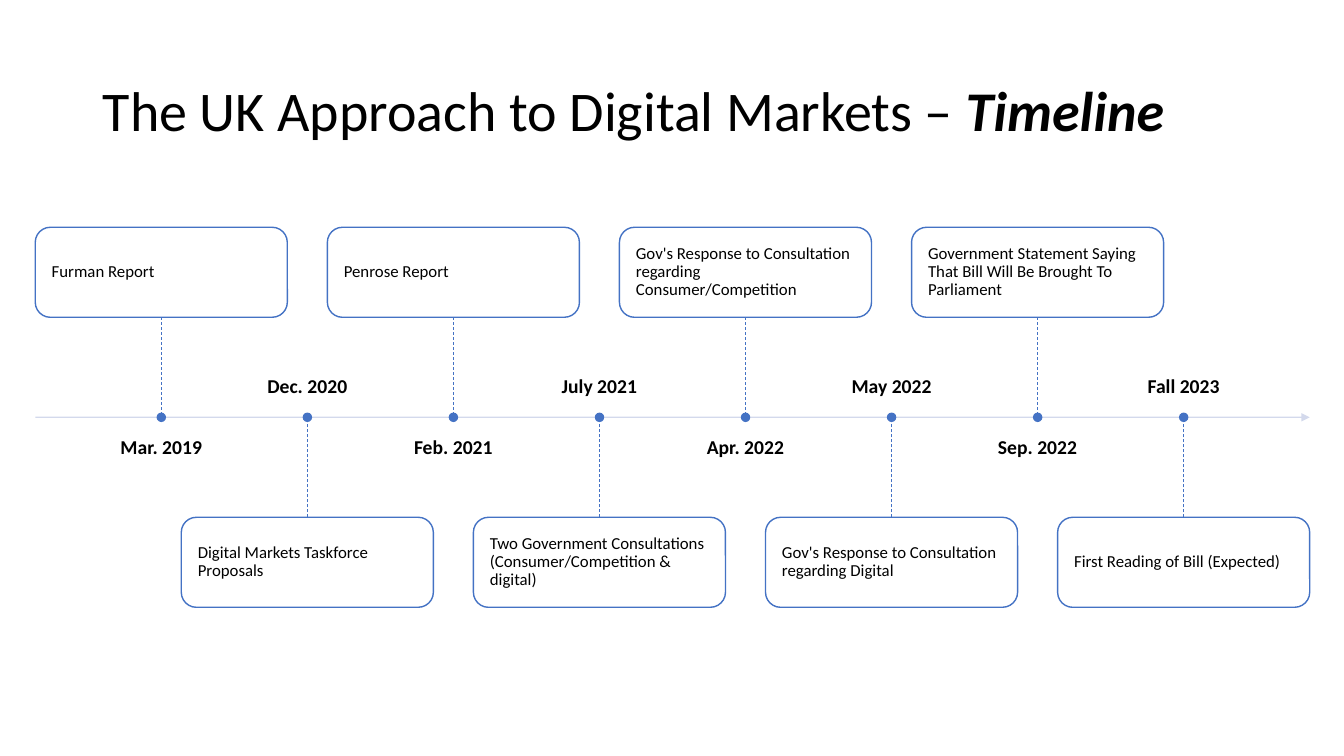
from dataclasses import dataclass

import lxml.etree
import pptx
import pptx.dml.color
import pptx.dml.fill
import pptx.enum.dml
import pptx.enum.shapes
import pptx.enum.text
import pptx.oxml.ns
import pptx.shapes.connector
import pptx.slide
import pptx.text.text
import pptx.util

RGBColor = pptx.dml.color.RGBColor
BLACK = RGBColor(0x00, 0x00, 0x00)
WHITE = RGBColor(0xFF, 0xFF, 0xFF)
BLUE = RGBColor(0x44, 0x72, 0xC4)
PALE_BLUE = RGBColor(0xCF, 0xD5, 0xEA)

FONT = "Calibri"
OPACITY = "90000"

# Grid in inches: one column per milestone, rows counted from the axis
SLIDE_WIDTH, SLIDE_HEIGHT = 13.33, 7.5
AXIS_LEFT, AXIS_RIGHT, AXIS_Y = 0.35, 12.99, 4.14
FIRST_X, LAST_X = 1.6, 11.74
TOP_EDGE, BOTTOM_EDGE = 2.25, 6.02
ROW = (BOTTOM_EDGE - TOP_EDGE) / 38
BOX_WIDTH, LABEL_WIDTH, DOT_SIZE, BOX_INSET = 2.5, 2.2, 0.08, 0.12
BOX_ROWS, STEM_ROWS, LABEL_ROWS, LABEL_GAP_ROWS = 9, 10, 6, 2

ANCHOR = pptx.enum.text.MSO_ANCHOR
ALIGN = pptx.enum.text.PP_ALIGN
SHAPE = pptx.enum.shapes.MSO_SHAPE
Inches = pptx.util.Inches


@dataclass(frozen=True)
class Milestone:
    date: str
    event: str


MILESTONES = [
    Milestone("Mar. 2019", "Furman Report"),
    Milestone("Dec. 2020", "Digital Markets Taskforce Proposals"),
    Milestone("Feb. 2021", "Penrose Report"),
    Milestone("July 2021", "Two Government Consultations (Consumer/Competition & digital)"),
    Milestone("Apr. 2022", "Gov's Response to Consultation regarding Consumer/Competition"),
    Milestone("May 2022", "Gov's Response to Consultation regarding Digital"),
    Milestone("Sep. 2022", "Government Statement Saying That Bill Will Be Brought To Parliament"),
    Milestone("Fall 2023", "First Reading of Bill (Expected)"),
]
COLUMN = (LAST_X - FIRST_X) / (len(MILESTONES) - 1)

TITLE_FORMAT = {"name": FONT, "size": pptx.util.Pt(40)}
DATE_FORMAT = {"name": FONT, "size": pptx.util.Pt(14), "bold": True}
EVENT_FORMAT = {"name": FONT, "size": pptx.util.Pt(12)}


def add_run(paragraph: pptx.text.text._Paragraph, text: str, font_format: dict) -> None:
    run = paragraph.add_run()
    run.text = text
    run.font.color.rgb = BLACK
    for attribute, value in font_format.items():
        setattr(run.font, attribute, value)


def write(frame: pptx.text.text.TextFrame, text: str, font_format: dict,
          anchor: ANCHOR, alignment: ALIGN, inset: float) -> None:
    frame.word_wrap = True
    frame.vertical_anchor = anchor
    for side in ("left", "top", "right", "bottom"):
        setattr(frame, f"margin_{side}", Inches(inset))
    paragraph = frame.paragraphs[0]
    paragraph.alignment = alignment
    paragraph.line_spacing = 0.9
    add_run(paragraph, text, font_format)


def make_translucent(element: lxml.etree._Element) -> None:
    """Add an alpha value to the first colour inside the element."""
    colour = next(element.iter(pptx.oxml.ns.qn("a:srgbClr")))
    lxml.etree.SubElement(colour, pptx.oxml.ns.qn("a:alpha"), val=OPACITY)


def add_line(slide: pptx.slide.Slide, start: tuple[float, float], end: tuple[float, float],
             colour: RGBColor, width: float) -> pptx.shapes.connector.Connector:
    line = slide.shapes.add_connector(pptx.enum.shapes.MSO_CONNECTOR.STRAIGHT,
                                      *map(Inches, start + end))
    line.line.color.rgb = colour
    line.line.width = pptx.util.Pt(width)
    lxml.etree.SubElement(line._element.spPr, pptx.oxml.ns.qn("a:effectLst"))
    return line


def add_shape(slide: pptx.slide.Slide, kind: SHAPE, left: float, top: float,
              width: float, height: float, fill: RGBColor):
    shape = slide.shapes.add_shape(kind, *map(Inches, (left, top, width, height)))
    shape.shadow.inherit = False
    shape.fill.solid()
    shape.fill.fore_color.rgb = fill
    shape.line.color.rgb = BLUE
    shape.line.width = pptx.util.Pt(1)
    return shape


def add_title(slide: pptx.slide.Slide) -> None:
    title = slide.shapes.title
    title.left, title.top = Inches(0.92), Inches(0.4)
    title.width, title.height = Inches(11.5), Inches(1.45)
    write(title.text_frame, "The UK Approach to Digital Markets – ", TITLE_FORMAT,
          ANCHOR.MIDDLE, ALIGN.LEFT, 0.1)
    add_run(title.text_frame.paragraphs[0], "Timeline",
            TITLE_FORMAT | {"bold": True, "italic": True})


def add_axis(slide: pptx.slide.Slide) -> None:
    axis = add_line(slide, (AXIS_LEFT, AXIS_Y), (AXIS_RIGHT, AXIS_Y), PALE_BLUE, 1)
    outline = axis._element.spPr.find(pptx.oxml.ns.qn("a:ln"))
    make_translucent(outline)
    lxml.etree.SubElement(outline, pptx.oxml.ns.qn("a:tailEnd"), type="triangle")


def add_milestone(slide: pptx.slide.Slide, index: int, milestone: Milestone) -> None:
    """Draw box, stem, date and dot; even milestones have the box above the axis."""
    centre = FIRST_X + index * COLUMN
    above = index % 2 == 0
    box_row = -(STEM_ROWS + BOX_ROWS) if above else STEM_ROWS
    label_row = LABEL_GAP_ROWS if above else -(LABEL_GAP_ROWS + LABEL_ROWS)

    event_box = add_shape(slide, SHAPE.ROUNDED_RECTANGLE, centre - BOX_WIDTH / 2,
                          AXIS_Y + box_row * ROW, BOX_WIDTH, BOX_ROWS * ROW, WHITE)
    make_translucent(event_box._element.spPr)
    write(event_box.text_frame, milestone.event, EVENT_FORMAT,
          ANCHOR.MIDDLE, ALIGN.LEFT, BOX_INSET)

    stem_end = AXIS_Y + (-STEM_ROWS if above else STEM_ROWS) * ROW
    stem = add_line(slide, (centre, stem_end), (centre, AXIS_Y), BLUE, 0.5)
    stem.line.dash_style = pptx.enum.dml.MSO_LINE.DASH
    stem.begin_connect(event_box, 2 if above else 0)

    date = slide.shapes.add_textbox(*map(Inches, (
        centre - LABEL_WIDTH / 2, AXIS_Y + label_row * ROW, LABEL_WIDTH, LABEL_ROWS * ROW)))
    write(date.text_frame, milestone.date, DATE_FORMAT,
          ANCHOR.TOP if above else ANCHOR.BOTTOM, ALIGN.CENTER, 0)

    add_shape(slide, SHAPE.OVAL, centre - DOT_SIZE / 2, AXIS_Y - DOT_SIZE / 2,
              DOT_SIZE, DOT_SIZE, BLUE)


def main() -> None:
    presentation = pptx.Presentation()
    presentation.slide_width = Inches(SLIDE_WIDTH)
    presentation.slide_height = Inches(SLIDE_HEIGHT)
    slide = presentation.slides.add_slide(presentation.slide_layouts[5])
    add_title(slide)
    add_axis(slide)
    for index, milestone in enumerate(MILESTONES):
        add_milestone(slide, index, milestone)
    presentation.save("out.pptx")


if __name__ == "__main__":
    main()
